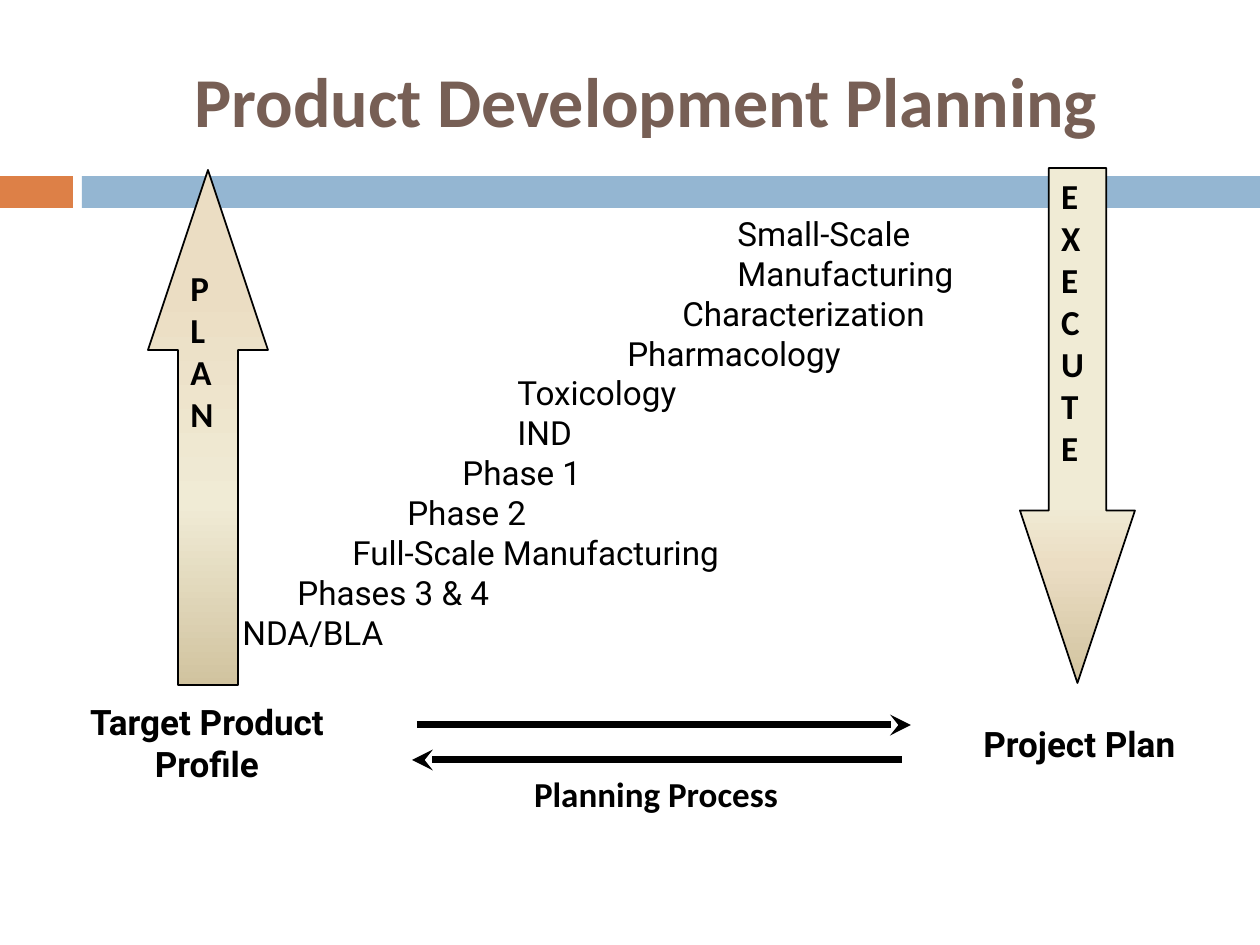
"""Build the Product Development Planning slide."""
from dataclasses import dataclass

from lxml.etree import SubElement
from pptx import Presentation
from pptx.dml.color import RGBColor
from pptx.enum.shapes import MSO_CONNECTOR, MSO_SHAPE
from pptx.enum.text import MSO_ANCHOR as Anchor, PP_ALIGN as Align
from pptx.oxml.ns import qn
from pptx.util import Emu, Pt

PX = 914400 / 126
BLACK = "000000"
SAND, CREAM, KHAKI = "EBDDC3", "F0EBD5", "D1C39F"
STEP = 55


@dataclass(frozen=True)
class Area:
    left: int
    top: int
    width: int
    height: int


@dataclass(frozen=True)
class BlockArrow:
    word: str
    preset: MSO_SHAPE
    area: Area
    stops: tuple[tuple[int, str], ...]


@dataclass(frozen=True)
class Label:
    text: str
    area: Area
    font: str
    size: int = 20
    color: str = BLACK
    align: Align = Align.CENTER
    anchor: Anchor = Anchor.TOP


@dataclass(frozen=True)
class Stage:
    name: str
    level: int


BANDS = (
    (Area(0, 176, 73, 32), "DD8047"),
    (Area(82, 176, 1178, 32), "94B6D2"),
)
ARROWS = (
    BlockArrow("PLAN", MSO_SHAPE.UP_ARROW, Area(148, 170, 120, 515),
               ((23, SAND), (65, CREAM), (100, KHAKI))),
    BlockArrow("EXECUTE", MSO_SHAPE.DOWN_ARROW, Area(1020, 168, 115, 515),
               ((65, CREAM), (77, SAND), (100, KHAKI))),
)
STAGES = (
    Stage("Small-Scale", 9),
    Stage("Manufacturing", 9),
    Stage("Characterization", 8),
    Stage("Pharmacology", 7),
    Stage("Toxicology", 5),
    Stage("IND", 5),
    Stage("Phase 1", 4),
    Stage("Phase 2", 3),
    Stage("Full-Scale Manufacturing", 2),
    Stage("Phases 3 & 4", 1),
    Stage("NDA/BLA", 0),
)
FLOWS = ((417, 911, 725), (902, 412, 760))
LABELS = (
    Label("Project Plan", Area(971, 716, 241, 55), "Roboto", align=Align.LEFT),
    Label("Target Product Profile", Area(74, 694, 266, 140), "Roboto"),
    Label("Product Development Planning", Area(84, 32, 1124, 136), "Calibri",
          size=40, color="775F55", anchor=Anchor.MIDDLE),
    Label("Planning Process", Area(420, 766, 472, 55), "Calibri"),
)


def px(value: int) -> Emu:
    """Turn pixels into EMU."""
    return Emu(round(value * PX))


def place(area: Area) -> tuple[Emu, Emu, Emu, Emu]:
    """Give an area as EMU arguments."""
    return px(area.left), px(area.top), px(area.width), px(area.height)


def paint(target, color: str) -> None:
    """Set a font, or a solid fill, to a hex colour."""
    if hasattr(target, "solid"):
        target.solid()
        target.fore_color.rgb = RGBColor.from_string(color)
    else:
        target.color.rgb = RGBColor.from_string(color)


def write(para, text: str, *, font: str, size: int, color: str = BLACK,
          bold: bool = True, align: Align = Align.LEFT) -> None:
    """Add one formatted span of text to a paragraph."""
    para.alignment = align
    span = para.add_run()
    span.text = text
    span.font.name = font
    span.font.size = Pt(size)
    span.font.bold = bold
    paint(span.font, color)


def add_box(page, area: Area, anchor: Anchor = Anchor.TOP):
    """Add a wrapping text box and return its text frame."""
    frame = page.shapes.add_textbox(*place(area)).text_frame
    frame.word_wrap = True
    frame.vertical_anchor = anchor
    return frame


def add_band(page, area: Area, color: str) -> None:
    """Draw one plain part of the header stripe."""
    band = page.shapes.add_shape(MSO_SHAPE.RECTANGLE, *place(area))
    band.shadow.inherit = False
    paint(band.fill, color)
    band.line.fill.background()


def add_block_arrow(page, arrow: BlockArrow) -> None:
    """Draw a gradient block arrow with its word stacked upright."""
    shape = page.shapes.add_shape(arrow.preset, *place(arrow.area))
    shape.shadow.inherit = False
    shape.adjustments[0] = 0.5
    shape.adjustments[1] = 1.5
    shape.fill.gradient()
    shape.fill.gradient_angle = 270
    stop_list = shape._element.spPr.find(qn("a:gradFill")).find(qn("a:gsLst"))
    stop_list.clear()
    for percent, color in arrow.stops:
        stop = SubElement(stop_list, qn("a:gs"), pos=str(percent * 1000))
        SubElement(stop, qn("a:srgbClr"), val=color)
    paint(shape.line.fill, BLACK)
    shape.line.width = Pt(1)
    frame = shape.text_frame
    frame.word_wrap = False
    frame.vertical_anchor = Anchor.MIDDLE
    frame._txBody.bodyPr.set("vert", "wordArtVert")
    write(frame.paragraphs[0], arrow.word, font="Calibri", size=20)


def add_stages(page, area: Area, stages: tuple[Stage, ...]) -> None:
    """Write the stages as a staircase, one indent step per level."""
    frame = add_box(page, area)
    for index, stage in enumerate(stages):
        para = frame.add_paragraph() if index else frame.paragraphs[0]
        para.line_spacing = Pt(22.8)
        para._p.get_or_add_pPr().set("marL", str(px(stage.level * STEP)))
        write(para, stage.name, font="Roboto", size=19, bold=False)


def add_flow(page, start: int, end: int, height: int) -> None:
    """Draw a thick horizontal line with a stealth arrowhead at its end."""
    flow = page.shapes.add_connector(
        MSO_CONNECTOR.STRAIGHT, px(start), px(height), px(end), px(height))
    paint(flow.line.fill, BLACK)
    flow.line.width = Pt(4)
    SubElement(flow.line._get_or_add_ln(), qn("a:tailEnd"), type="stealth")
    SubElement(flow._element.spPr, qn("a:effectLst"))


def add_label(page, label: Label) -> None:
    """Write one bold label."""
    frame = add_box(page, label.area, label.anchor)
    write(frame.paragraphs[0], label.text, font=label.font, size=label.size,
          color=label.color, align=label.align)


def main() -> None:
    """Build and save the deck."""
    deck = Presentation()
    deck.slide_width, deck.slide_height = px(1260), px(945)
    page = deck.slides.add_slide(deck.slide_layouts[6])
    for area, color in BANDS:
        add_band(page, area, color)
    for arrow in ARROWS:
        add_block_arrow(page, arrow)
    add_stages(page, Area(230, 207, 858, 456), STAGES)
    for start, end, height in FLOWS:
        add_flow(page, start, end, height)
    for label in LABELS:
        add_label(page, label)
    deck.save("out.pptx")


if __name__ == "__main__":
    main()
